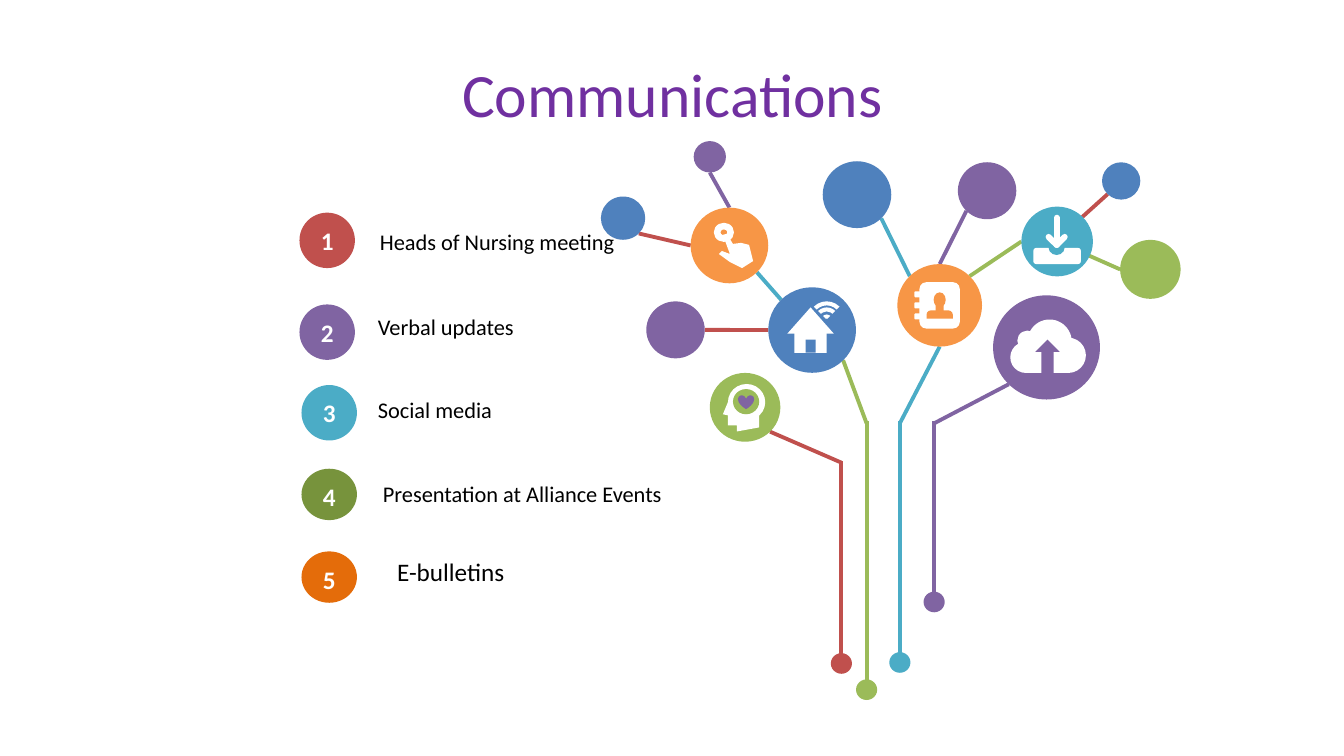
from dataclasses import dataclass

import pptx
import pptx.dml.color
import pptx.enum.shapes
import pptx.enum.text
import pptx.oxml
import pptx.util
from pptx.util import Inches


@dataclass(frozen=True)
class Theme:
    font: str = "Calibri"
    title_size: int = 44
    number_size: int = 18
    label_size: int = 16
    last_label_size: int = 18
    branch_width: float = 2.75
    arrow_width: float = 4.25
    title: str = "7030A0"
    black: str = "000000"
    white: str = "FFFFFF"
    red: str = "C0504D"
    purple: str = "8064A2"
    teal: str = "4BACC6"
    green: str = "9BBB59"
    blue: str = "4F81BD"
    orange: str = "F79646"
    dark_green: str = "77933C"
    dark_orange: str = "E46C0A"


THEME = Theme()
SHAPE = pptx.enum.shapes.MSO_SHAPE
MIDDLE = pptx.enum.text.MSO_ANCHOR.MIDDLE
TOP = pptx.enum.text.MSO_ANCHOR.TOP
CENTER = pptx.enum.text.PP_ALIGN.CENTER
NODE_RATIO = 0.975  # height of a tree node relative to its width
DIAGONAL = 0.5 ** 0.5
BEND_OVERLAP = 0.02  # a trunk runs this far past its bend

# Nodes of the tree: colour, left, top, width
NODES = {
    "red root": (THEME.red, 8.24, 6.48, 0.21),
    "green root": (THEME.green, 8.49, 6.74, 0.21),
    "teal root": (THEME.teal, 8.82, 6.47, 0.21),
    "purple root": (THEME.purple, 9.16, 5.87, 0.21),
    "upload": (THEME.purple, 9.85, 2.93, 1.06),
    "download": (THEME.teal, 10.13, 2.05, 0.71),
    "mind": (THEME.green, 7.04, 3.7, 0.7),
    "contacts": (THEME.orange, 8.9, 2.62, 0.84),
    "touch": (THEME.orange, 6.85, 2.06, 0.77),
    "home": (THEME.blue, 7.62, 2.85, 0.87),
    "purple leaf": (THEME.purple, 9.5, 1.61, 0.58),
    "blue leaf": (THEME.blue, 8.16, 1.6, 0.68),
    "blue bud": (THEME.blue, 10.93, 1.61, 0.38),
    "green leaf": (THEME.green, 11.11, 2.38, 0.6),
    "left leaf": (THEME.purple, 6.41, 2.99, 0.58),
    "purple bud": (THEME.purple, 6.88, 1.4, 0.32),
    "left bud": (THEME.blue, 5.96, 1.95, 0.44),
}
# Branches join compass points on the rims of two nodes; C is a centre
BRANCHES = [
    (THEME.green, "download", "C", "green leaf", "W"),
    (THEME.red, "download", "NE", "blue bud", "SW"),
    (THEME.teal, "home", "NW", "touch", "SE"),
    (THEME.green, "contacts", "NE", "download", "W"),
    (THEME.teal, "contacts", "NW", "blue leaf", "SE"),
    (THEME.purple, "contacts", "N", "purple leaf", "SW"),
    (THEME.red, "home", "W", "left leaf", "E"),
    (THEME.red, "touch", "W", "left bud", "SE"),
    (THEME.purple, "purple bud", "S", "touch", "N"),
]
# Trunks: root, top of the trunk, node it bends to, compass point
TRUNKS = [
    ("red root", 4.57, "mind", "SE"), ("green root", 4.18, "home", "SE"),
    ("teal root", 4.18, "contacts", "S"), ("purple root", 4.18, "upload", "SW"),
]
# Channels: label, its left and top, its size, badge colour, badge left, top, height, anchor
CHANNELS = [
    ("Heads of Nursing meeting", 3.67, 2.21, THEME.label_size,
     THEME.red, 2.97, 2.11, 0.55, MIDDLE),
    ("Verbal updates", 3.65, 3.06, THEME.label_size,
     THEME.purple, 2.97, 3.02, 0.55, MIDDLE),
    ("Social media", 3.65, 3.88, THEME.label_size,
     THEME.teal, 2.99, 3.82, 0.55, MIDDLE),
    ("Presentation at Alliance Events", 3.7, 4.71, THEME.label_size,
     THEME.dark_green, 2.99, 4.65, 0.51, TOP),
    ("E-bulletins", 3.84, 5.47, THEME.last_label_size,
     THEME.dark_orange, 2.99, 5.47, 0.51, TOP),
]


def rgb(color):
    return pptx.dml.color.RGBColor.from_string(color)


def paint(shape, color):
    shape.shadow.inherit = False
    shape.fill.solid()
    shape.fill.fore_color.rgb = rgb(color)
    shape.line.fill.background()


def write(shape, text, size, color, anchor=TOP, align=None, bold=False):
    frame = shape.text_frame
    frame.word_wrap = True
    frame.vertical_anchor = anchor
    paragraph = frame.paragraphs[0]
    paragraph.text = text
    paragraph.alignment = align
    paragraph.font.name = THEME.font
    paragraph.font.size = pptx.util.Pt(size)
    paragraph.font.bold = bold
    paragraph.font.color.rgb = rgb(color)


def add_label(shapes, box, text, size, color, **style):
    write(shapes.add_textbox(*map(Inches, box)), text, size, color, **style)


def add_part(shapes, kind, color, *box):
    part = shapes.add_shape(kind, *map(Inches, box))
    paint(part, color)
    return part


def add_outline(shapes, color, points):
    first, *others = [(Inches(x), Inches(y)) for x, y in points]
    outline = shapes.build_freeform(*first)
    outline.add_line_segments(others, close=True)
    paint(outline.convert_to_shape(), color)


def add_line(shapes, color, start, end, width=THEME.branch_width):
    line = shapes.add_connector(pptx.enum.shapes.MSO_CONNECTOR.STRAIGHT,
                                *map(Inches, (*start, *end)))
    line.line.color.rgb = rgb(color)
    line.line.width = pptx.util.Pt(width)
    line._element.spPr.append(pptx.oxml.parse_xml(
        '<a:effectLst xmlns:a="http://schemas.openxmlformats.org/drawingml/2006/main"/>'))
    return line


def rim(node, compass):
    """Point on a node's rim in a compass direction."""
    _, left, top, width = NODES[node]
    reach = width / 2 * (DIAGONAL if len(compass) == 2 else 1)
    across = ("E" in compass) - ("W" in compass)
    down = ("S" in compass) - ("N" in compass)
    return (left + width / 2 + across * reach,
            top + (width / 2 + down * reach) * NODE_RATIO)


def add_tree(shapes):
    for color, start, start_side, end, end_side in BRANCHES:
        add_line(shapes, color, rim(start, start_side), rim(end, end_side))
    for root, trunk_top, node, side in TRUNKS:
        color = NODES[root][0]
        x, y = rim(root, "C")
        add_line(shapes, color, (x, y), (x, trunk_top))
        add_line(shapes, color, (x, trunk_top + BEND_OVERLAP), rim(node, side))
    for color, left, top, width in NODES.values():
        add_part(shapes, SHAPE.OVAL, color, left, top, width, width * NODE_RATIO)


def add_contacts_icon(shapes):
    add_part(shapes, SHAPE.ROUNDED_RECTANGLE, THEME.white, 9.12, 2.8, 0.4, 0.46)
    for row in range(3):
        add_part(shapes, SHAPE.ROUNDED_RECTANGLE, THEME.white, 9.07, 2.89 + row * 0.11, 0.1, 0.06)
    add_part(shapes, SHAPE.OVAL, THEME.orange, 9.26, 2.9, 0.12, 0.15)
    add_part(shapes, SHAPE.RECTANGLE, THEME.orange, 9.28, 3, 0.08, 0.1)
    add_part(shapes, SHAPE.ROUND_2_SAME_RECTANGLE, THEME.orange,
             9.19, 3.08, 0.26, 0.08).adjustments[0] = 0.5


def add_upload_icon(shapes):
    for left, top, size in [(10.02, 3.39, 0.31), (10.09, 3.28, 0.2),
                            (10.19, 3.17, 0.44), (10.42, 3.35, 0.35)]:
        add_part(shapes, SHAPE.OVAL, THEME.white, left, top, size, size)
    add_part(shapes, SHAPE.RECTANGLE, THEME.white, 10.17, 3.5, 0.43, 0.2)
    add_part(shapes, SHAPE.UP_ARROW, THEME.purple, 10.27, 3.37, 0.24, 0.33)


def add_home_icon(shapes):
    add_part(shapes, SHAPE.ISOSCELES_TRIANGLE, THEME.white, 7.81, 3.05, 0.46, 0.26)
    add_part(shapes, SHAPE.RECTANGLE, THEME.white, 7.88, 3.28, 0.32, 0.22)
    add_part(shapes, SHAPE.RECTANGLE, THEME.blue, 7.99, 3.37, 0.1, 0.13)
    # Signal: quarter rings around one centre
    for radius in (0.18, 0.12, 0.05):
        wave = add_part(shapes, SHAPE.BLOCK_ARC, THEME.white,
                        8.2 - radius, 3.17 - radius, 2 * radius, 2 * radius)
        wave.adjustments[0], wave.adjustments[1] = 135, 189  # 225 and 315 degrees
        wave.adjustments[2] = 0.04 / (2 * radius)


def add_mind_icon(shapes):
    add_part(shapes, SHAPE.OVAL, THEME.white, 7.22, 3.81, 0.37, 0.36)
    add_outline(shapes, THEME.white, [
        (7.22, 3.99), (7.17, 4.11), (7.22, 4.12), (7.22, 4.22),
        (7.31, 4.22), (7.31, 4.28), (7.53, 4.24), (7.53, 4.1)])
    add_part(shapes, SHAPE.OVAL, THEME.green, 7.27, 3.86, 0.26, 0.25)
    add_part(shapes, SHAPE.HEART, THEME.purple, 7.32, 3.92, 0.16, 0.14)


def add_touch_icon(shapes):
    add_part(shapes, SHAPE.DONUT, THEME.white, 7.08, 2.21, 0.2, 0.19).adjustments[0] = 0.35
    add_outline(shapes, THEME.white, [
        (7.17, 2.33), (7.21, 2.32), (7.27, 2.42), (7.35, 2.41), (7.43, 2.43), (7.47, 2.59),
        (7.36, 2.66), (7.24, 2.6), (7.13, 2.52), (7.16, 2.49), (7.24, 2.52)])


def add_download_icon(shapes):
    add_part(shapes, SHAPE.ROUNDED_RECTANGLE, THEME.white, 10.25, 2.46, 0.47, 0.16)
    add_part(shapes, SHAPE.OVAL, THEME.teal, 10.4, 2.38, 0.16, 0.15)
    tip = (10.48, 2.43)
    for tail in [(10.48, 2.16), (10.4, 2.35), (10.56, 2.35)]:
        stroke = add_line(shapes, THEME.white, tail, tip, THEME.arrow_width)
        stroke._element.spPr.ln.set("cap", "rnd")


def add_channels(shapes):
    for number, (label, label_left, label_top, size, color,
                 left, top, height, anchor) in enumerate(CHANNELS, 1):
        badge = add_part(shapes, SHAPE.OVAL, color, left, top, 0.55, height)
        write(badge, str(number), THEME.number_size, THEME.white, anchor, CENTER, bold=True)
        add_label(shapes, (label_left, label_top, 3, 0.37), label, size, THEME.black)


def main():
    deck = pptx.Presentation()
    deck.slide_width, deck.slide_height = Inches(13.33), Inches(7.5)
    slide = deck.slides.add_slide(deck.slide_layouts[6])
    add_label(slide.shapes, (0.67, 0.3, 12, 1.25), "Communications", THEME.title_size,
              THEME.title, anchor=MIDDLE, align=CENTER)
    tree = slide.shapes.add_group_shape().shapes
    add_tree(tree)
    for add_icon in (add_contacts_icon, add_upload_icon, add_home_icon,
                     add_mind_icon, add_touch_icon, add_download_icon):
        add_icon(tree)
    add_channels(slide.shapes)
    deck.save("out.pptx")


if __name__ == "__main__":
    main()
